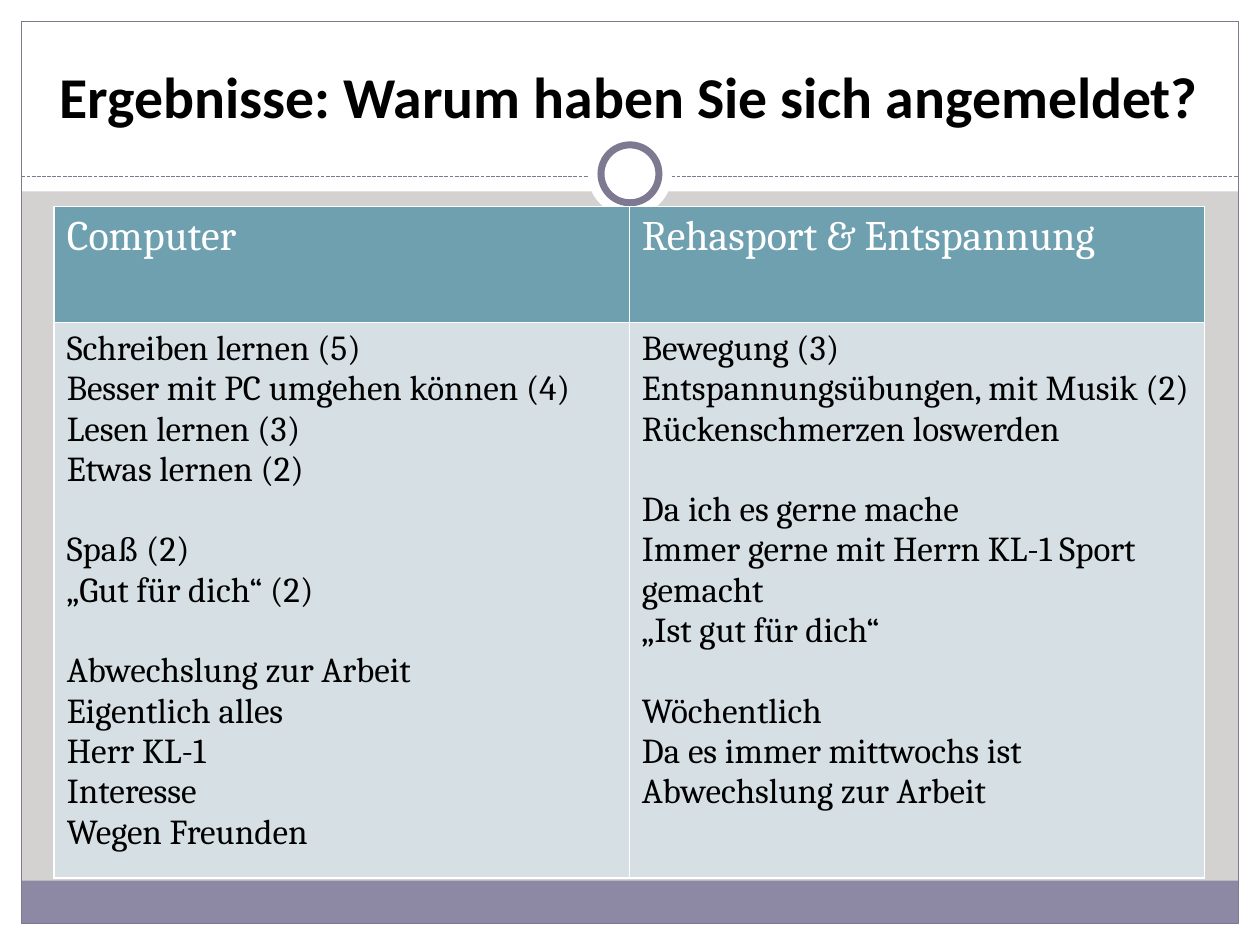
from pptx import Presentation
from pptx.dml.color import RGBColor as Rgb
from pptx.enum.dml import MSO_LINE as Dash
from pptx.enum.shapes import MSO_CONNECTOR as Link, MSO_SHAPE as Kind
from pptx.enum.text import MSO_ANCHOR as Anchor, PP_ALIGN as Align
from pptx.oxml.ns import qn
from pptx.util import Inches, Pt
from lxml.etree import SubElement as Sub

TITLE = "Ergebnisse: Warum haben Sie sich angemeldet?"
COLUMNS = [
    ("Computer", [
        ["Schreiben lernen (5)", "Besser mit PC umgehen können (4)",
         "Lesen lernen (3)", "Etwas lernen (2)"],
        ["Spaß (2)", "„Gut für dich“ (2)"],
        ["Abwechslung zur Arbeit", "Eigentlich alles", "Herr KL-1",
         "Interesse", "Wegen Freunden"],
    ]),
    ("Rehasport & Entspannung", [
        ["Bewegung (3)", "Entspannungsübungen, mit Musik (2)",
         "Rückenschmerzen loswerden"],
        ["Da ich es gerne mache", "Immer gerne mit Herrn KL-1 Sport gemacht",
         "„Ist gut für dich“"],
        ["Wöchentlich", "Da es immer mittwochs ist", "Abwechslung zur Arbeit"],
    ]),
]
COLORS = {"back": "D4D2D0", "white": "FFFFFF", "band": "8D89A4",
          "line": "7C7991", "head": "6EA0B0", "body": "D5DFE4",
          "text": "000000"}
WIDE, HIGH, EDGE = 10, 7.5, 0.17
TOP, RULE = 1.52, 1.4
MID = WIDE / 2
ROWS = [0.92, 4.31]
LINE_GAP = 23


def color(name):
    return Rgb.from_string(COLORS[name])


def add_shape(slide, kind, box, fill=None, line=None, width=0.75):
    shape = slide.shapes.add_shape(kind, *map(Inches, box))
    shape.shadow.inherit = False
    if fill:
        shape.fill.solid()
        shape.fill.fore_color.rgb = color(fill)
    else:
        shape.fill.background()
    if line:
        shape.line.color.rgb = color(line)
        shape.line.width = Pt(width)
    else:
        shape.line.fill.background()


def style(par, size, tone, face, bold=False):
    for run in par.runs:
        font = run.font
        font.size, font.name, font.bold = Pt(size), face, bold
        font.color.rgb = color(tone)


def add_frame(slide):
    for box in [(0, HIGH - EDGE, WIDE, EDGE), (0, 0, WIDE, TOP),
                (0, 0, EDGE, HIGH), (WIDE - EDGE, 0, EDGE, HIGH)]:
        add_shape(slide, Kind.RECTANGLE, box, "white")
    inner = WIDE - 2 * EDGE
    add_shape(slide, Kind.RECTANGLE, (EDGE, 6.99, inner, 0.34), "band")
    add_shape(slide, Kind.RECTANGLE, (EDGE, EDGE, inner, HIGH - 2 * EDGE),
              line="line")
    rule = slide.shapes.add_connector(
        Link.STRAIGHT, *map(Inches, (EDGE, RULE, WIDE - EDGE, RULE)))
    rule.line.color.rgb = color("line")
    rule.line.width = Pt(0.75)
    rule.line.dash_style = Dash.SQUARE_DOT
    Sub(rule._element.spPr, qn("a:effectLst"))
    for size, line in [(0.67, None), (0.46, "line")]:
        box = (MID - size / 2, 1.38 - size / 2, size, size)
        add_shape(slide, Kind.OVAL, box, "white", line, 4)


def add_title(slide):
    box = slide.shapes.add_textbox(*map(Inches, (0.33, 0.25, 9.33, 0.83)))
    frame = box.text_frame
    frame.word_wrap = True
    frame.vertical_anchor = Anchor.BOTTOM
    frame.text = TITLE
    par = frame.paragraphs[0]
    par.alignment = Align.CENTER
    style(par, 33, "text", "Calibri", True)


def paint(cell, fill):
    props = cell._tc.get_or_add_tcPr()
    for side in ("lnL", "lnR", "lnT", "lnB"):
        line = Sub(props, qn("a:" + side), w=str(Pt(1)))
        solid = Sub(line, qn("a:solidFill"))
        Sub(solid, qn("a:srgbClr"), val=COLORS["white"])
    cell.fill.solid()
    cell.fill.fore_color.rgb = color(fill)


def add_answers(slide):
    box = (0.43, 1.64, 9.13, sum(ROWS))
    table = slide.shapes.add_table(
        len(ROWS), len(COLUMNS), *map(Inches, box)).table
    for row, high in zip(table.rows, ROWS):
        row.height = Inches(high)
    for col, (head, groups) in enumerate(COLUMNS):
        top, body = table.cell(0, col), table.cell(1, col)
        paint(top, "head")
        paint(body, "body")
        top.text_frame.text = head
        style(top.text_frame.paragraphs[0], 24, "white", "Cambria")
        frame = body.text_frame
        frame.text = "\n".join(text for group in groups for text in group)
        pars = iter(frame.paragraphs)
        for num, group in enumerate(groups):
            for pos in range(len(group)):
                par = next(pars)
                style(par, 20, "text", "Cambria")
                if num and not pos:
                    par.space_before = Pt(LINE_GAP)


def main():
    deck = Presentation()
    deck.slide_width, deck.slide_height = Inches(WIDE), Inches(HIGH)
    slide = deck.slides.add_slide(deck.slide_layouts[6])
    slide.background.fill.solid()
    slide.background.fill.fore_color.rgb = color("back")
    add_frame(slide)
    add_title(slide)
    add_answers(slide)
    deck.save("out.pptx")


if __name__ == "__main__":
    main()
